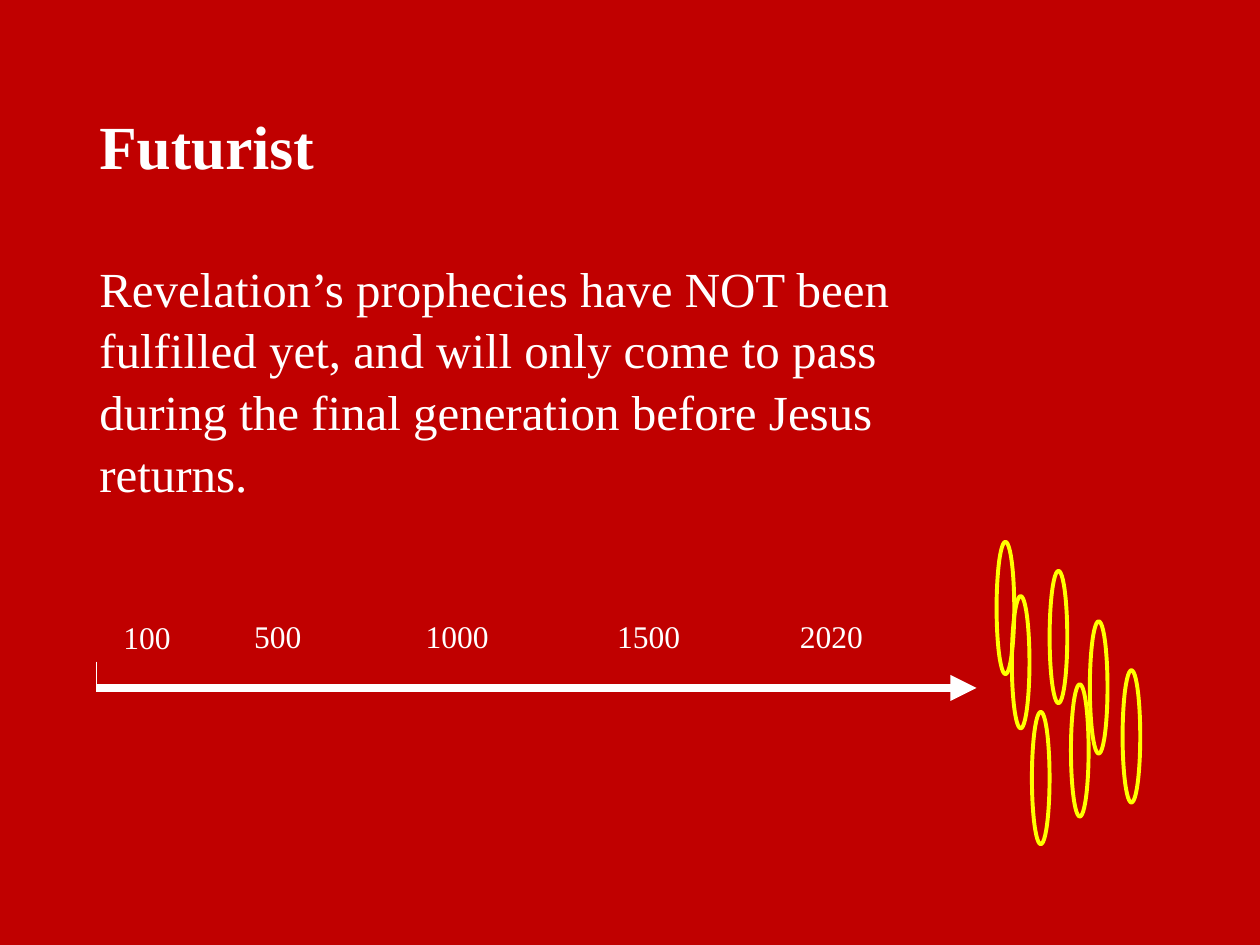
from lxml import etree
from pptx import Presentation
from pptx.dml.color import RGBColor
from pptx.enum import shapes
from pptx.oxml.ns import qn
from pptx.util import Pt

COLORS = {"back": "C00000", "ink": "FFFFFF", "event": "FFFF00"}
FONT = "Times New Roman"

TITLE = "Futurist"
BODY = ("Revelation’s prophecies have NOT been fulfilled yet, and will only "
        "come to pass during the final generation before Jesus returns.")
# Year, left, top, width
YEARS = [("500", 138.2, 349.2, 44.6), ("1000", 236.2, 349.2, 67),
         ("1500", 345.6, 349.2, 60.5), ("2020", 450, 349.2, 74.9),
         ("100", 63.4, 349.9, 44.6)]
# Left, top of each future event
EVENTS = [(578.2, 340.6), (622.8, 355), (569.5, 309.6), (589.7, 406.8),
          (612, 391), (641.5, 383), (599.8, 326.2)]
EVENT_W, EVENT_H = 10.1, 75.6
AXIS_LEFT, AXIS_RIGHT, AXIS_Y = 55.4, 558, 393.1
TICK_TOP, TICK_BOTTOM = 378, 395.3


def color(name):
    return RGBColor.from_string(COLORS[name])


def add_line(x1, y1, x2, y2, width, arrow=False):
    line = slide.shapes.add_connector(
        shapes.MSO_CONNECTOR.STRAIGHT, Pt(x1), Pt(y1), Pt(x2), Pt(y2))
    line.line.color.rgb = color("ink")
    line.line.width = Pt(width)
    if arrow:
        ln = line.line._get_or_add_ln()
        etree.SubElement(ln, qn("a:tailEnd"), type="triangle")
    etree.SubElement(line._element.spPr, qn("a:effectLst"))


def add_text(left, top, width, height, paragraphs):
    """Each paragraph is (text, size, bold, line spacing, space before)."""
    sp = slide.shapes.add_textbox(Pt(left), Pt(top), Pt(width), Pt(height))
    tf = sp.text_frame
    tf.word_wrap = True
    for i, (words, size, bold, spacing, before) in enumerate(paragraphs):
        p = tf.add_paragraph() if i else tf.paragraphs[0]
        p.text = words
        p.line_spacing = spacing
        p.space_before = Pt(before)
        p.font.name = FONT
        p.font.size = Pt(size)
        p.font.bold = bold
        p.font.color.rgb = color("ink")


prs = Presentation()
prs.slide_width, prs.slide_height = Pt(720), Pt(540)
slide = prs.slides.add_slide(prs.slide_layouts[6])
slide.background.fill.solid()
slide.background.fill.fore_color.rgb = color("back")

# Timeline with years and starting tick
add_line(AXIS_LEFT, AXIS_Y, AXIS_RIGHT, AXIS_Y, 5, arrow=True)
for year, left, top, width in YEARS:
    add_text(left, top, width, 28.8, [(year, 18, False, 1.0, 0)])
add_line(AXIS_LEFT, TICK_TOP, AXIS_LEFT, TICK_BOTTOM, 0.5)

# Title and description
add_text(49.7, 56.2, 500.4, 227.5,
         [(TITLE, 35, True, 1.05, 0), (BODY, 28, False, 1.05, 42)])

# Events beyond the end of the timeline
for left, top in EVENTS:
    sp = slide.shapes.add_shape(shapes.MSO_SHAPE.OVAL, Pt(left), Pt(top),
                                Pt(EVENT_W), Pt(EVENT_H))
    sp.shadow.inherit = False
    sp.fill.background()
    sp.line.color.rgb = color("event")
    sp.line.width = Pt(2.25)

prs.save("out.pptx")
